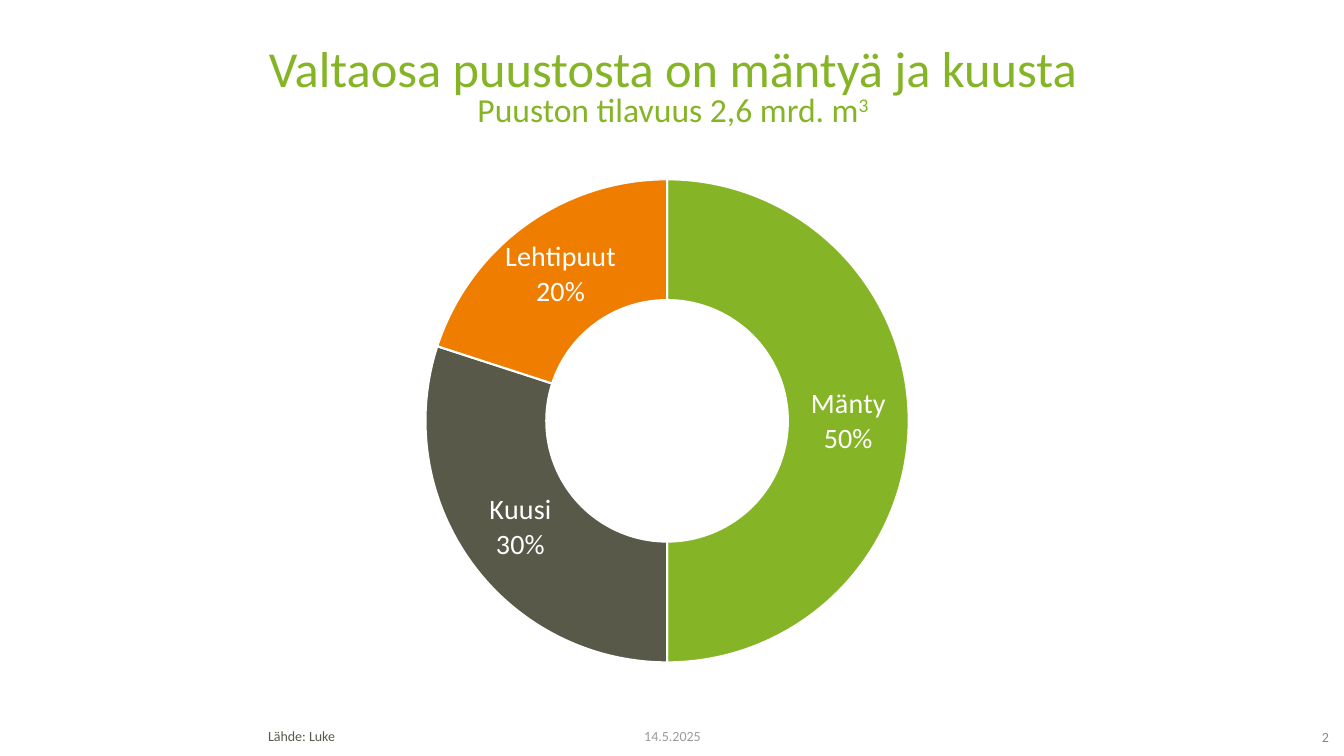
from dataclasses import dataclass

from lxml import etree
from pptx import Presentation
from pptx.chart.data import CategoryChartData
from pptx.dml.color import RGBColor
from pptx.enum.chart import XL_CHART_TYPE as ChartType
from pptx.enum.text import MSO_ANCHOR as Anchor, MSO_AUTO_SIZE as AutoSize, PP_ALIGN as Align
from pptx.oxml.ns import qn
from pptx.util import Inches, Pt


@dataclass(frozen=True)
class Theme:
    font: str = "Calibri"
    green: str = "85B526"
    dark: str = "59594A"
    orange: str = "EF7D00"
    white: str = "FFFFFF"
    date_gray: str = "9B9B96"
    number_gray: str = "878787"
    title: int = 36
    subtitle: int = 24
    label: int = 20
    small: int = 10


theme = Theme()


def style_font(font, size, color):
    for name, value in {"name": theme.font, "size": Pt(size), "bold": False}.items():
        setattr(font, name, value)
    font.color.rgb = RGBColor.from_string(color)


presentation = Presentation()
presentation.slide_width, presentation.slide_height = Inches(13.33), Inches(7.5)
slide = presentation.slides.add_slide(presentation.slide_layouts[5])

# Title with subtitle
title = slide.shapes.title
title_box = {"left": 0.83, "top": 0.39, "width": 11.69, "height": 0.98}
for name, value in title_box.items():
    setattr(title, name, Inches(value))
frame = title.text_frame
frame_format = {"word_wrap": True, "auto_size": AutoSize.NONE, "vertical_anchor": Anchor.MIDDLE}
for name, value in frame_format.items():
    setattr(frame, name, value)
paragraph = frame.paragraphs[0]
paragraph.alignment = Align.CENTER
paragraph.line_spacing = 0.8
heading = paragraph.add_run()
heading.text = "Valtaosa puustosta on mäntyä ja kuusta"
style_font(heading.font, theme.title, theme.green)
paragraph.add_line_break()
for text in ("Puuston tilavuus 2,6 mrd. m", "3"):
    run = paragraph.add_run()
    run.text = text
    style_font(run.font, theme.subtitle, theme.green)
run._r.get_or_add_rPr().set("baseline", "30000")

# Doughnut chart
species = [("Mänty", 50, theme.green), ("Kuusi", 30, theme.dark), ("Lehtipuut", 20, theme.orange)]
data = CategoryChartData()
data.categories = [name for name, _, _ in species]
data.add_series("Puuston tilavuus", [share for _, share, _ in species])
chart = slide.shapes.add_chart(
    ChartType.DOUGHNUT, Inches(0.83), Inches(1.57), Inches(11.69), Inches(5.16), data
).chart
chart.has_legend = False
chart.has_title = False
style_font(chart.font, theme.small, theme.dark)

plot = chart.plots[0]
plot.vary_by_categories = True
plot._element.find(qn("c:holeSize")).set("val", "55")
for index, (_, _, color) in enumerate(species):
    point_format = plot.series[0].points[index].format
    point_format.fill.solid()
    point_format.fill.fore_color.rgb = RGBColor.from_string(color)
    point_format.line.color.rgb = RGBColor.from_string(theme.white)
    point_format.line.width = Pt(1.5)

labels = plot.series[0].data_labels
label_format = {
    "show_category_name": True, "show_percentage": True, "show_value": False,
    "number_format": "0%", "number_format_is_linked": False,
}
for name, value in label_format.items():
    setattr(labels, name, value)
style_font(labels.font, theme.label, theme.white)
separator = etree.Element(qn("c:separator"))
separator.text = "\n"
labels._element.find(qn("c:showBubbleSize")).addnext(separator)

plot_area = chart._chartSpace.chart.plotArea
layout = plot_area.find(qn("c:layout"))
if layout is None:
    layout = etree.Element(qn("c:layout"))
    plot_area.insert(0, layout)
manual = etree.SubElement(layout, qn("c:manualLayout"))
ring_layout = {
    "layoutTarget": "inner", "xMode": "edge", "yMode": "edge",
    "x": "0.29", "y": "0.04", "w": "0.41", "h": "0.93",
}
for name, value in ring_layout.items():
    etree.SubElement(manual, qn(f"c:{name}")).set("val", value)

# Source, date and slide number
footers = [
    ("Lähde: Luke", (2.56, 7.17, 3.75, 0.27), Align.LEFT, Anchor.TOP, theme.dark),
    ("14.5.2025", (5.17, 7.15, 3, 0.31), Align.CENTER, Anchor.MIDDLE, theme.date_gray),
    ("2", (12.65, 7.24, 0.53, 0.19), Align.RIGHT, Anchor.MIDDLE, theme.number_gray),
]
for text, box, alignment, anchor, color in footers:
    frame = slide.shapes.add_textbox(*map(Inches, box)).text_frame
    frame.word_wrap = True
    frame.vertical_anchor = anchor
    paragraph = frame.paragraphs[0]
    paragraph.alignment = alignment
    run = paragraph.add_run()
    run.text = text
    style_font(run.font, theme.small, color)
number_margins = {"margin_left": 0, "margin_top": 0, "margin_right": 0, "margin_bottom": 0.04}
for name, value in number_margins.items():
    setattr(frame, name, Inches(value))

presentation.save("out.pptx")
